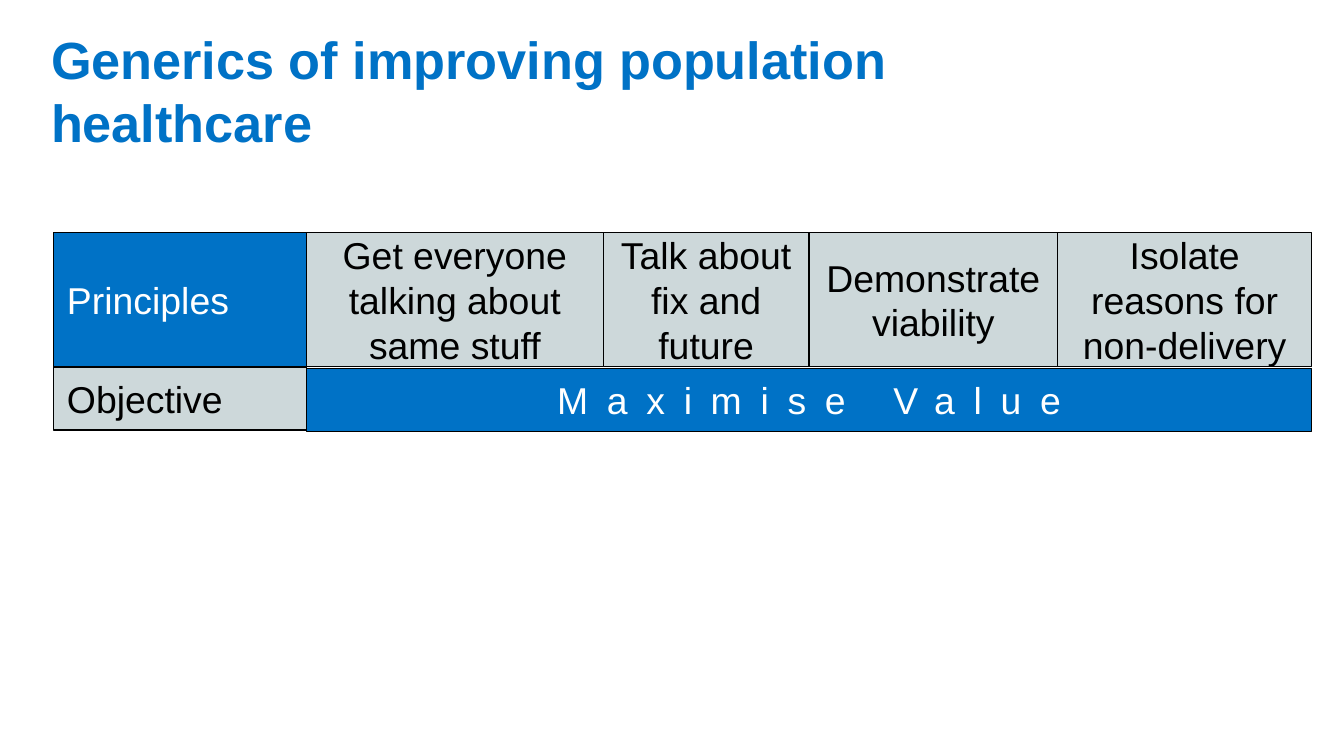
from itertools import pairwise

from pptx import Presentation
from pptx.dml.color import RGBColor
from pptx.enum.shapes import MSO_SHAPE
from pptx.enum.text import MSO_ANCHOR, PP_ALIGN
from pptx.util import Inches, Pt

BLUE = RGBColor(0x00, 0x72, 0xC6)
GREY = RGBColor(0xCD, 0xD8, 0xDA)
BLACK = RGBColor(0x00, 0x00, 0x00)
WHITE = RGBColor(0xFF, 0xFF, 0xFF)

# Content
TITLE = "Generics of improving population healthcare"
PRINCIPLES = [
    "Get everyone talking about same stuff",
    "Talk about fix and future",
    "Demonstrate viability",
    "Isolate reasons for non-delivery",
]
OBJECTIVE = "Maximise Value"

# Grid, in inches
COLUMN_EDGES = [0.4, 2.28, 4.49, 6.02, 7.87, 9.76]
PRINCIPLES_TOP, PRINCIPLES_HEIGHT = 1.73, 1.0
OBJECTIVE_TOP, OBJECTIVE_HEIGHT = 2.73, 0.47

# Cell styles: fill, text colour, alignment
ROW_LABEL = (BLUE, WHITE, PP_ALIGN.LEFT)
PLAIN_LABEL = (GREY, BLACK, PP_ALIGN.LEFT)
PRINCIPLE = (GREY, BLACK, PP_ALIGN.CENTER)
GOAL = (BLUE, WHITE, PP_ALIGN.CENTER)


def write(frame, text, align, color, **font_format):
    frame.word_wrap = True
    frame.vertical_anchor = MSO_ANCHOR.MIDDLE
    paragraph = frame.paragraphs[0]
    paragraph.alignment = align
    run = paragraph.add_run()
    run.text = text
    for name, value in {"name": "Arial", **font_format}.items():
        setattr(run.font, name, value)
    run.font.color.rgb = color
    return run


def add_cell(slide, text, left, right, top, height, style):
    fill, color, align = style
    cell = slide.shapes.add_shape(
        MSO_SHAPE.RECTANGLE, Inches(left), Inches(top),
        Inches(right - left), Inches(height))
    cell.shadow.inherit = False
    cell.fill.solid()
    cell.fill.fore_color.rgb = fill
    cell.line.color.rgb = BLACK
    cell.line.width = Pt(0.75)
    return write(cell.text_frame, text, align, color, size=Pt(20))


def main():
    # Widescreen slide, 16:9
    prs = Presentation()
    prs.slide_width = Inches(10)
    prs.slide_height = prs.slide_width * 9 // 16
    slide = prs.slides.add_slide(prs.slide_layouts[6])

    # Title
    title = slide.shapes.add_textbox(
        Inches(0.19), Inches(0.12), Inches(8.4), Inches(1.1))
    margins = {"margin_left": 0.19, "margin_top": 0.08,
               "margin_right": 0.08, "margin_bottom": 0.08}
    for name, value in margins.items():
        setattr(title.text_frame, name, Inches(value))
    write(title.text_frame, TITLE, PP_ALIGN.LEFT, BLUE,
          size=Pt(28), bold=True)

    # Objective row: the goal spans every principle column
    goal = add_cell(slide, OBJECTIVE, COLUMN_EDGES[1], COLUMN_EDGES[-1],
                    OBJECTIVE_TOP + 0.01, OBJECTIVE_HEIGHT, GOAL)
    goal.font._element.set("spc", "1000")  # letter spacing of 10 pt
    add_cell(slide, "Objective", *COLUMN_EDGES[:2],
             OBJECTIVE_TOP, OBJECTIVE_HEIGHT, PLAIN_LABEL)

    # Principles row
    principles_row = (PRINCIPLES_TOP, PRINCIPLES_HEIGHT)
    for text, edges in zip(PRINCIPLES, pairwise(COLUMN_EDGES[1:])):
        add_cell(slide, text, *edges, *principles_row, PRINCIPLE)
    add_cell(slide, "Principles", *COLUMN_EDGES[:2], *principles_row, ROW_LABEL)

    prs.save("out.pptx")


if __name__ == "__main__":
    main()
